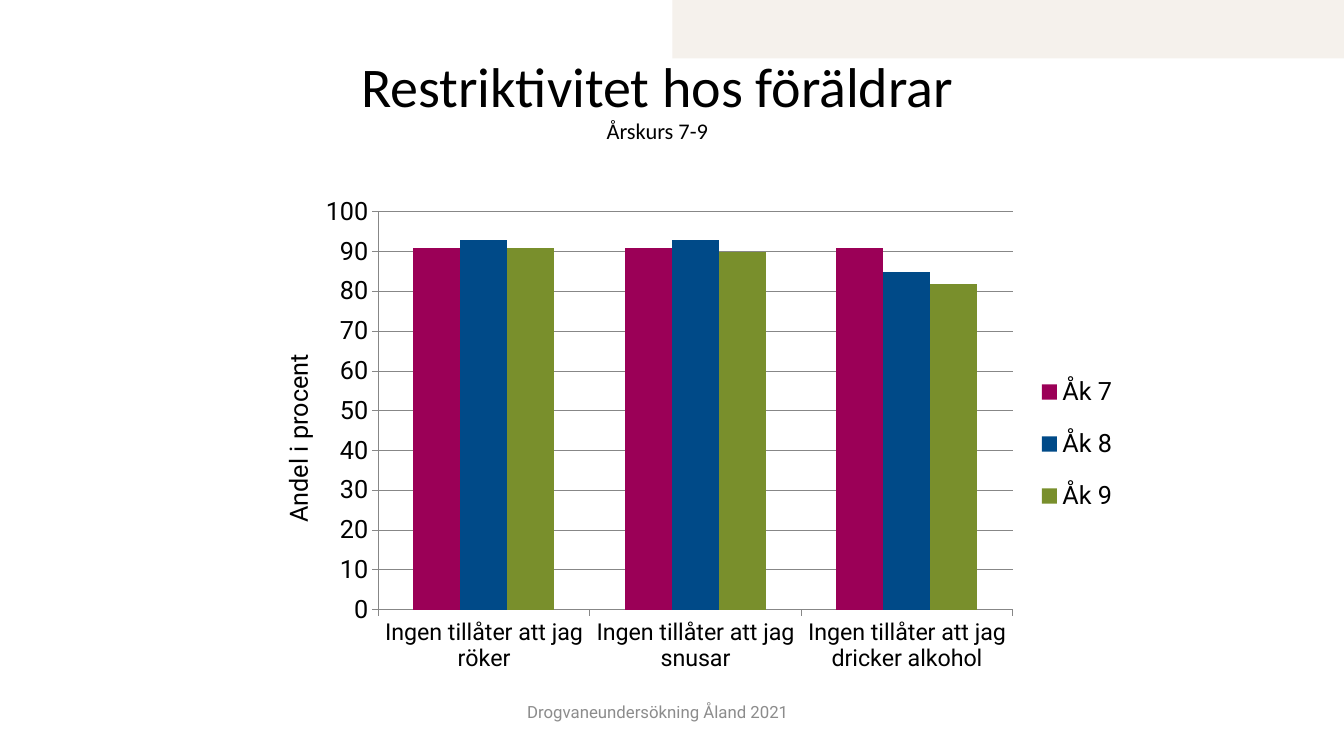
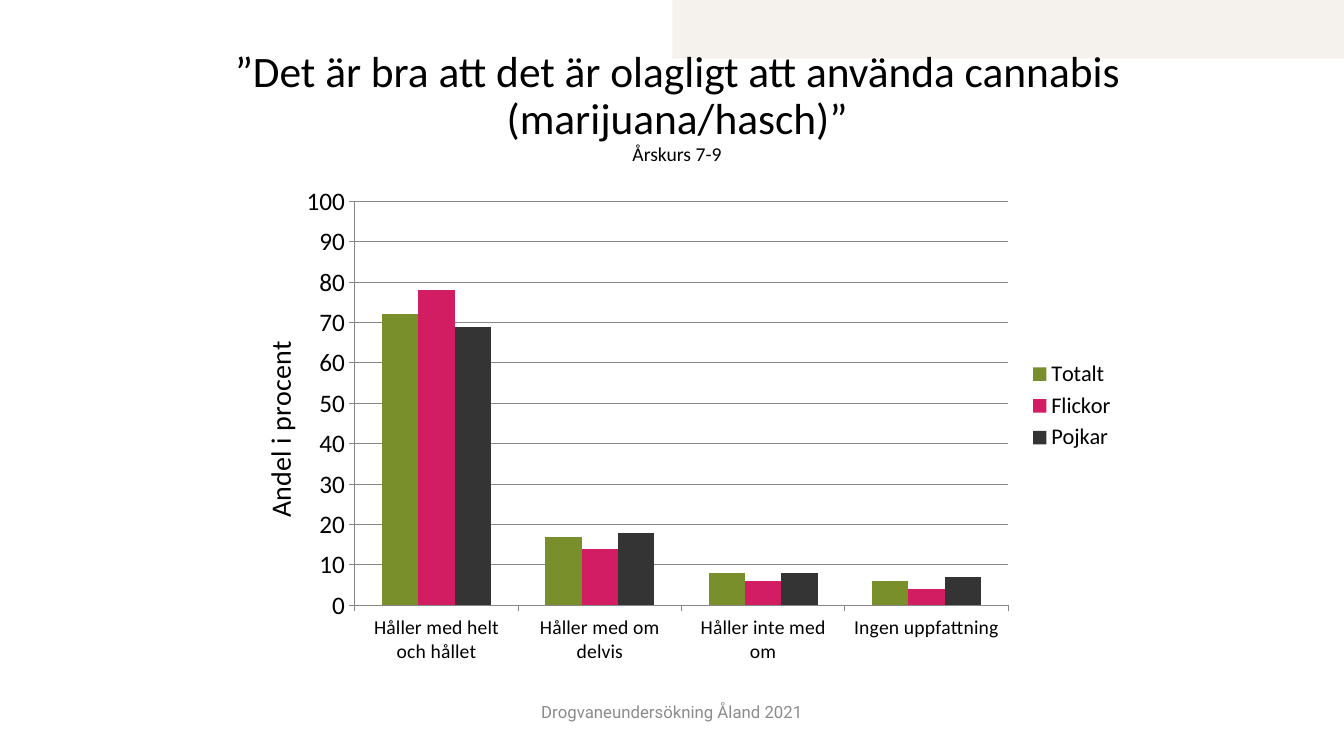
from lxml.etree import SubElement
from pptx import Presentation
from pptx.chart.data import CategoryChartData
from pptx.dml.color import RGBColor
from pptx.enum.chart import XL_CHART_TYPE, XL_LEGEND_POSITION, XL_TICK_MARK
from pptx.enum.shapes import MSO_SHAPE
from pptx.enum.text import MSO_ANCHOR, PP_ALIGN
from pptx.oxml import parse_xml
from pptx.oxml.ns import nsdecls, qn
from pptx.util import Inches, Pt

COLORS = {
    "band": "F5F1EC",
    "text": "000000",
    "footer": "8C8C8C",
    "line": "878787",
    "purple": "9B0057",
    "blue": "004A88",
    "green": "798F2C",
    "pink": "D31D63",
    "charcoal": "343434",
}
SUBTITLE = "Årskurs 7-9"
FOOTER = "Drogvaneundersökning Åland 2021"
VALUE_TITLE = "Andel i procent"


def color(name):
    return RGBColor.from_string(COLORS[name])


def set_font(font, name, size, color_name="text"):
    values = {"name": name, "size": Pt(size), "bold": False}
    for attribute, value in values.items():
        setattr(font, attribute, value)
    font.color.rgb = color(color_name)


def set_layout(element, position, **fractions):
    """Place a chart part by fractions of the chart's size."""
    for old in element.findall(qn("c:layout")):
        element.remove(old)
    layout = parse_xml(f"<c:layout {nsdecls('c')}/>")
    manual = SubElement(layout, qn("c:manualLayout"))
    if "w" in fractions and position == 0:
        SubElement(manual, qn("c:layoutTarget")).set("val", "inner")
    for axis in "xy":
        SubElement(manual, qn(f"c:{axis}Mode")).set("val", "edge")
    for key, value in fractions.items():
        SubElement(manual, qn(f"c:{key}")).set("val", str(value))
    element.insert(position, layout)


class SurveyDeck:
    def __init__(self):
        self.deck = Presentation()
        self.deck.slide_width = Inches(13.33)
        self.deck.slide_height = Inches(7.5)
        self.slide = None

    def add_slide(self):
        """Start a slide with the band at the top right."""
        self.slide = self.deck.slides.add_slide(self.deck.slide_layouts[6])
        band = self.slide.shapes.add_shape(
            MSO_SHAPE.RECTANGLE, Inches(6.67), 0, Inches(6.67), Inches(0.58))
        band.shadow.inherit = False
        band.fill.solid()
        band.fill.fore_color.rgb = color("band")
        band.line.fill.background()

    def add_box(self, place, **frame_format):
        box = self.slide.shapes.add_textbox(*map(Inches, place))
        for attribute, value in {"word_wrap": True, **frame_format}.items():
            setattr(box.text_frame, attribute, value)
        para = box.text_frame.paragraphs[0]
        para.alignment = PP_ALIGN.CENTER
        return para

    def add_span(self, para, text, *font_format):
        span = para.add_run()
        span.text = text
        set_font(span.font, *font_format)

    def add_title(self, text, place, size, subtitle_size):
        margins = {f"margin_{side}": 0 for side in ("left", "right", "top", "bottom")}
        para = self.add_box(place, **margins)
        para.line_spacing = 0.9
        self.add_span(para, text, "Calibri", size)
        para.add_line_break()
        self.add_span(para, SUBTITLE, "Calibri", subtitle_size)

    def add_footer(self, left):
        para = self.add_box((left, 6.86, 3.17, 0.4), vertical_anchor=MSO_ANCHOR.MIDDLE)
        self.add_span(para, FOOTER, "Roboto", 12, "footer")

    def add_column_chart(self, place, categories, series, font, sizes, layouts):
        """Draw columns; series maps a name to its colour and values."""
        data = CategoryChartData(number_format="General")
        data.categories = categories
        for name, (_, values) in series.items():
            data.add_series(name, values)
        chart = self.slide.shapes.add_chart(
            XL_CHART_TYPE.COLUMN_CLUSTERED, *map(Inches, place), data).chart
        set_font(chart.font, font, 18)
        chart.has_title = False

        plot = chart.plots[0]
        plot_format = {"gap_width": 150, "overlap": 0, "vary_by_categories": False}
        for attribute, value in plot_format.items():
            setattr(plot, attribute, value)
        for column, (color_name, _) in zip(plot.series, series.values()):
            column.format.fill.solid()
            column.format.fill.fore_color.rgb = color(color_name)

        self.style_axes(chart, font, sizes)
        chart.has_legend = True
        chart.legend.position = XL_LEGEND_POSITION.RIGHT
        chart.legend.include_in_layout = False
        set_font(chart.legend.font, font, sizes["legend"])

        parts = {"plot": ("c:plotArea", 0), "legend": ("c:legend", 1),
                 "title": ("c:valAx/c:title", 1)}
        for part, (tag, position) in parts.items():
            element = chart.element.xpath(f".//{tag}")[0]
            set_layout(element, position, **layouts[part])

    def style_axes(self, chart, font, sizes):
        value_axis = chart.value_axis
        value_format = {"minimum_scale": 0, "maximum_scale": 100, "major_unit": 10,
                        "has_major_gridlines": True}
        for attribute, value in value_format.items():
            setattr(value_axis, attribute, value)
        para = value_axis.axis_title.text_frame.paragraphs[0]
        self.add_span(para, VALUE_TITLE, font, sizes["title"])
        for axis, size in ((chart.category_axis, sizes["category"]), (value_axis, 18)):
            axis.major_tick_mark = XL_TICK_MARK.OUTSIDE
            axis.minor_tick_mark = XL_TICK_MARK.NONE
            set_font(axis.tick_labels.font, font, size)
        for owner in (chart.category_axis, value_axis, value_axis.major_gridlines):
            owner.format.line.color.rgb = color("line")
            owner.format.line.width = Pt(0.75)


def main():
    survey = SurveyDeck()

    survey.add_slide()
    survey.add_title("Restriktivitet hos föräldrar", (2.21, 0.59, 8.62, 1.08), 40, 16)
    survey.add_column_chart(
        (2.11, 1.85, 9.12, 5.06),
        [f"Ingen tillåter att jag {habit}" for habit in ("röker", "snusar", "dricker alkohol")],
        {"Åk 7": ("purple", (91, 91, 91)),
         "Åk 8": ("blue", (93, 93, 85)),
         "Åk 9": ("green", (91, 90, 82))},
        "Roboto",
        {"category": 16.6, "title": 18, "legend": 18},
        {"plot": {"x": 0.18, "y": 0.05, "w": 0.69, "h": 0.78},
         "legend": {"x": 0.89, "y": 0.33, "w": 0.1, "h": 0.35},
         "title": {"x": 0.07, "y": 0.32}})
    survey.add_footer(4.94)

    survey.add_slide()
    survey.add_title("”Det är bra att det är olagligt att använda cannabis (marijuana/hasch)”",
                     (2.26, 0.5, 8.91, 1.25), 31, 14)
    survey.add_column_chart(
        (2.17, 1.75, 9, 4.95),
        ["Håller med helt och hållet", "Håller med om delvis",
         "Håller inte med om", "Ingen uppfattning"],
        {"Totalt": ("green", (72, 17, 8, 6)),
         "Flickor": ("pink", (78, 14, 6, 4)),
         "Pojkar": ("charcoal", (69, 18, 8, 7))},
        "Calibri",
        {"category": 14, "title": 20, "legend": 16},
        {"plot": {"x": 0.15, "y": 0.05, "w": 0.72, "h": 0.81},
         "legend": {"x": 0.89, "y": 0.36, "w": 0.1, "h": 0.2},
         "title": {"x": 0.04, "y": 0.32}})
    survey.add_footer(5.08)

    survey.deck.save("out.pptx")


if __name__ == "__main__":
    main()
